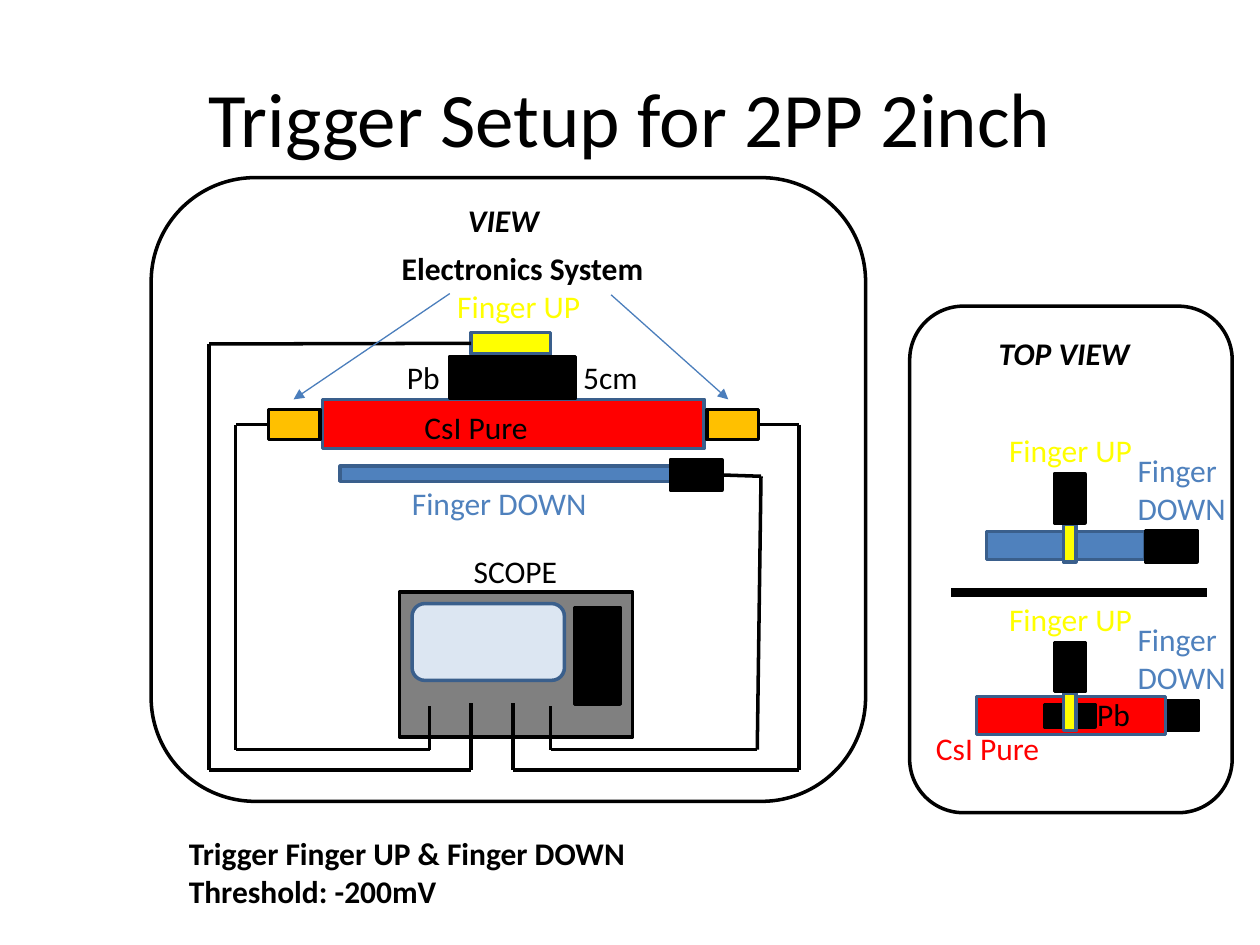
"""Build the trigger setup slide with its side view and top view."""
from dataclasses import dataclass

from lxml import etree
from pptx import Presentation
from pptx.dml.color import RGBColor
from pptx.enum.shapes import MSO_CONNECTOR, MSO_SHAPE
from pptx.enum.text import MSO_ANCHOR, PP_ALIGN
from pptx.oxml.ns import qn
from pptx.shapes.autoshape import Shape
from pptx.shapes.connector import Connector
from pptx.slide import Slide
from pptx.util import Inches, Pt

RECT, ROUND = MSO_SHAPE.RECTANGLE, MSO_SHAPE.ROUNDED_RECTANGLE
STRAIGHT = MSO_CONNECTOR.STRAIGHT
LEFT, CENTER = PP_ALIGN.LEFT, PP_ALIGN.CENTER
MIDDLE = MSO_ANCHOR.MIDDLE
LEFT_SIDE, RIGHT_SIDE = 1, 3


@dataclass(frozen=True)
class Theme:
    """Colours, font and sizes of the slide."""
    font: str = "Calibri"
    title: int = 44
    body: int = 18
    thin: float = 0.75
    line: float = 2
    thick: float = 5
    black: str = "000000"
    white: str = "FFFFFF"
    blue: str = "4F81BD"
    edge: str = "3A5F8C"
    arrow: str = "4B7EBC"
    yellow: str = "FFFF00"
    red: str = "FF0000"
    orange: str = "FFC000"
    gray: str = "808080"
    screen: str = "DCE6F2"


THEME = Theme()


@dataclass(frozen=True)
class Block:
    """A filled shape with an outline."""
    left: float
    top: float
    width: float
    height: float
    fill: str = THEME.black
    edge: str = THEME.black
    kind: MSO_SHAPE = RECT


@dataclass(frozen=True)
class Label:
    """A text box with one paragraph per line."""
    text: str
    left: float
    top: float
    width: float
    height: float = 0.4
    color: str = THEME.black
    bold: bool = False
    slant: bool = False
    align: PP_ALIGN = LEFT
    wrap: bool = True


@dataclass(frozen=True)
class Wire:
    """A chain of straight lines, with the block and side it starts from."""
    points: tuple[tuple[float, float], ...]
    start: Block | None = None
    side: int = LEFT_SIDE


PANELS = [
    Block(7.22, 2.43, 2.56, 4.02, THEME.white, kind=ROUND),
    Block(1.2, 1.41, 5.67, 4.95, THEME.white, kind=ROUND),
]

UPPER = Block(3.74, 2.64, 0.63, 0.17, THEME.yellow, THEME.edge)
LOWER = Block(5.32, 3.65, 0.41, 0.24)
WEST = Block(2.13, 3.25, 0.41, 0.24, THEME.orange)
EAST = Block(5.61, 3.25, 0.41, 0.24, THEME.orange)
SIDE_VIEW = [
    UPPER,
    Block(2.56, 3.17, 3.03, 0.39, THEME.red, THEME.edge),
    Block(2.7, 3.7, 2.62, 0.12, THEME.blue, THEME.edge),
    LOWER, EAST, WEST,
    Block(3.17, 4.7, 1.85, 1.15, THEME.gray),
    Block(3.27, 4.79, 1.21, 0.61, THEME.screen, THEME.edge, ROUND),
    Block(4.56, 4.82, 0.36, 0.77),
    Block(3.57, 2.83, 1, 0.33),
]
TOP_VIEW = [
    Block(7.83, 4.22, 1.26, 0.22, THEME.blue, THEME.edge),
    Block(9.09, 4.21, 0.41, 0.25),
    Block(9.1, 5.56, 0.41, 0.24),
    Block(7.75, 5.53, 1.5, 0.3, THEME.red, THEME.edge),
    Block(8.29, 5.59, 0.4, 0.18),
]
LABELS = [
    Label("TOP VIEW", 7.42, 2.6, 2.05, bold=True, slant=True, align=CENTER),
    Label("CsI Pure", 7.33, 5.74, 1.18, color=THEME.red),
    Label("Pb", 8.61, 5.47, 0.61),
    Label("VIEW", 2.97, 1.55, 2.05, bold=True, slant=True, align=CENTER),
    Label("Electronics System", 3.09, 1.93, 2.13, bold=True, wrap=False),
    Label("Finger UP", 3.53, 2.23, 1.18, color=THEME.yellow),
    Label("Pb", 3.13, 2.79, 0.61),
    Label("5cm", 4.53, 2.79, 0.85),
    Label("CsI Pure", 3.27, 3.19, 1.18),
    Label("Finger DOWN", 3.17, 3.79, 1.68, color=THEME.blue),
    Label("SCOPE", 3.25, 4.33, 1.68, align=CENTER),
    Label("Trigger Finger UP & Finger DOWN\nThreshold: -200mV",
          1.4, 6.57, 3.69, 0.71, bold=True, wrap=False),
]
WIRES = [
    Wire(((3.74, 2.73), (1.66, 2.73), (1.66, 6.11), (3.74, 6.11), (3.74, 5.58)), UPPER),
    Wire(((2.13, 3.37), (1.87, 3.37), (1.87, 5.95), (3.41, 5.95), (3.41, 5.6)), WEST),
    Wire(((6.02, 3.37), (6.34, 3.37), (6.34, 6.11), (4.07, 6.11), (4.07, 5.58)),
         EAST, RIGHT_SIDE),
    Wire(((5.73, 3.77), (6.04, 3.78), (6.01, 5.95), (4.37, 5.95), (4.37, 5.6)),
         LOWER, RIGHT_SIDE),
]
ARROWS = [((3.57, 2.33), (2.33, 3.17)), ((4.85, 2.34), (5.78, 3.17))]
VIEW_STEP = 1.34


def draw_block(slide: Slide, block: Block) -> Shape:
    """Draw one filled shape."""
    shape = slide.shapes.add_shape(block.kind, Inches(block.left), Inches(block.top),
                                   Inches(block.width), Inches(block.height))
    shape.shadow.inherit = False
    shape.fill.solid()
    shape.fill.fore_color.rgb = RGBColor.from_string(block.fill)
    shape.line.color.rgb = RGBColor.from_string(block.edge)
    shape.line.width = Pt(THEME.line)
    return shape


def draw_label(slide: Slide, label: Label) -> None:
    """Write one text box."""
    box = slide.shapes.add_textbox(Inches(label.left), Inches(label.top),
                                   Inches(label.width), Inches(label.height))
    frame = box.text_frame
    frame.word_wrap = label.wrap
    for count, text in enumerate(label.text.split("\n")):
        para = frame.add_paragraph() if count else frame.paragraphs[0]
        para.alignment = label.align
        run = para.add_run()
        run.text = text
        run.font.name = THEME.font
        run.font.size = Pt(THEME.body)
        run.font.bold = label.bold
        run.font.italic = label.slant
        run.font.color.rgb = RGBColor.from_string(label.color)


def draw_line(slide: Slide, start: tuple[float, float], end: tuple[float, float],
              color: str = THEME.black, width: float = THEME.line,
              arrow: bool = False) -> Connector:
    """Draw one straight line."""
    line = slide.shapes.add_connector(STRAIGHT, *map(Inches, start + end))
    line.line.color.rgb = RGBColor.from_string(color)
    line.line.width = Pt(width)
    if arrow:
        etree.SubElement(line.line._get_or_add_ln(), qn("a:tailEnd"), type="triangle")
    etree.SubElement(line._element.spPr, qn("a:effectLst"))
    return line


def draw_title(slide: Slide, text: str) -> None:
    """Fill and place the title."""
    title = slide.shapes.title
    title.left, title.top, title.width, title.height = map(Inches, (0.5, 0.3, 9, 1.25))
    title.text_frame.vertical_anchor = MIDDLE
    para = title.text_frame.paragraphs[0]
    para.alignment = CENTER
    run = para.add_run()
    run.text = text
    run.font.name = THEME.font
    run.font.size = Pt(THEME.title)
    run.font.color.rgb = RGBColor.from_string(THEME.black)


def main() -> None:
    """Build and save the slide."""
    deck = Presentation()
    deck.slide_width, deck.slide_height = Inches(10), Inches(7.5)
    slide = deck.slides.add_slide(deck.slide_layouts[5])
    draw_title(slide, "Trigger Setup for 2PP 2inch")
    shapes = {block: draw_block(slide, block) for block in PANELS + SIDE_VIEW + TOP_VIEW}
    for shift in (0, VIEW_STEP):
        draw_block(slide, Block(8.44, 4.16 + shift, 0.1, 0.3, THEME.yellow, THEME.edge))
        draw_block(slide, Block(8.37, 3.76 + shift, 0.24, 0.39))
        draw_label(slide, Label("Finger UP", 7.91, 3.37 + shift, 1.18, color=THEME.yellow))
        draw_label(slide, Label("Finger DOWN", 8.93, 3.53 + shift, 1, 0.71, THEME.blue))
    for label in LABELS:
        draw_label(slide, label)
    draw_line(slide, (7.55, 4.7), (9.58, 4.7), width=THEME.thick)
    for wire in WIRES:
        lines = [draw_line(slide, *pair) for pair in zip(wire.points, wire.points[1:])]
        if wire.start:
            lines[0].begin_connect(shapes[wire.start], wire.side)
    for start, end in ARROWS:
        draw_line(slide, start, end, THEME.arrow, THEME.thin, True)
    deck.save("out.pptx")


if __name__ == "__main__":
    main()
